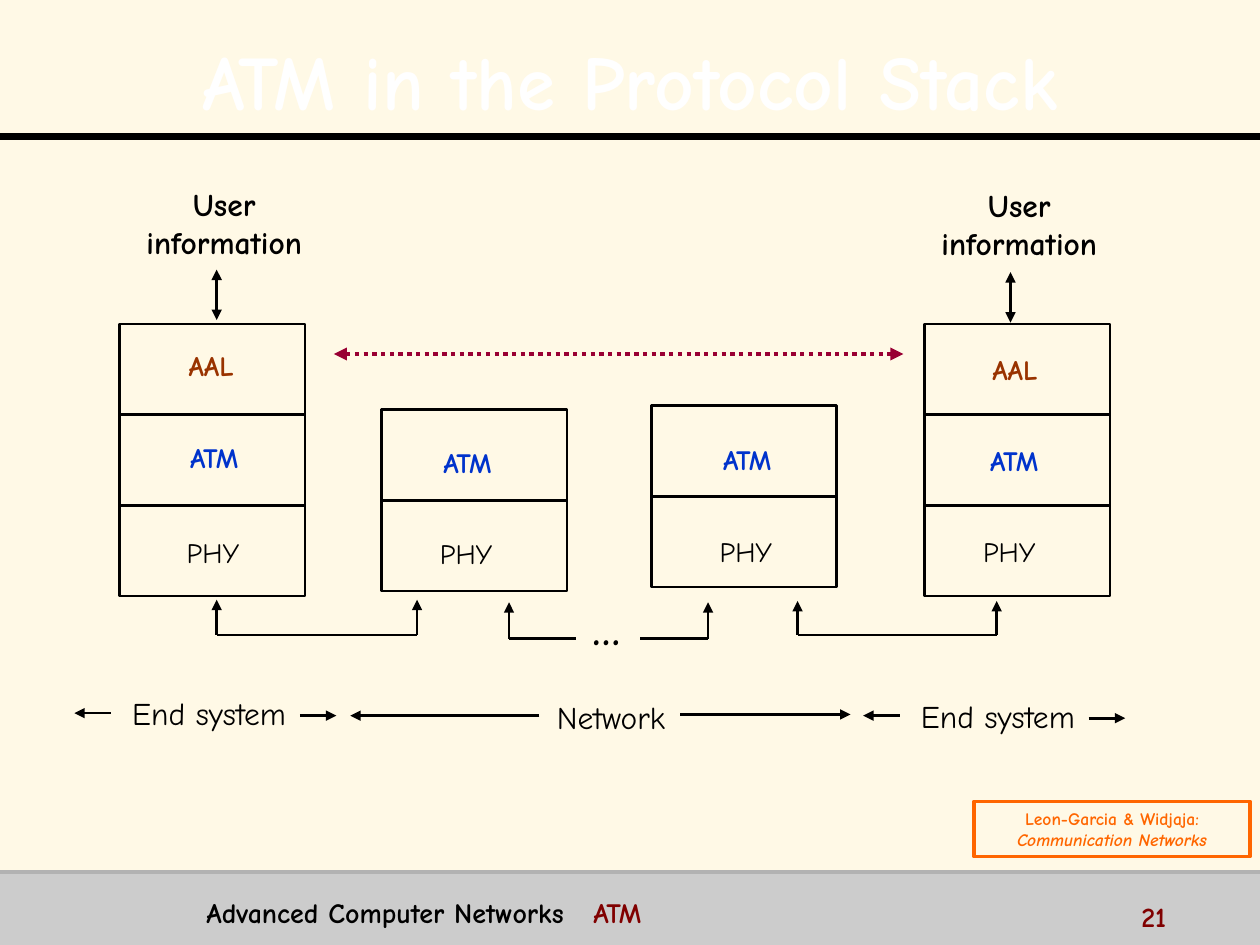
from dataclasses import dataclass

from lxml.etree import SubElement
from pptx import Presentation
from pptx.dml.color import RGBColor
from pptx.enum.dml import MSO_LINE
from pptx.enum.shapes import MSO_CONNECTOR, MSO_SHAPE
from pptx.enum.text import MSO_ANCHOR, PP_ALIGN
from pptx.oxml.ns import qn
from pptx.util import Inches, Pt


@dataclass(frozen=True)
class Theme:
    font: str = "Comic Neue"
    paper: str = "FFF9E6"
    ink: str = "000000"
    white: str = "FFFFFF"
    band: str = "CCCCCC"
    rule: str = "B2B2B2"
    brown: str = "993300"
    blue: str = "0033CC"
    wine: str = "990033"
    maroon: str = "800000"
    orange: str = "FF6600"
    title: int = 44
    dots: int = 24
    body: int = 18
    label: int = 16
    cite: int = 10
    thin: float = 1.5


@dataclass(frozen=True)
class Layer:
    color: str
    bold: bool
    width: float
    height: float = 0.37


@dataclass(frozen=True)
class Stack:
    """A column of layer boxes; each mark is a layer name with its label's left and top."""
    left: float
    top: float
    marks: tuple[tuple[str, float, float], ...]


@dataclass(frozen=True)
class Link:
    """A U-shaped link below two stacks, with an optional gap in its base."""
    left: float
    right: float
    top: float
    base: float
    gap: tuple[float, float] | None = None


@dataclass(frozen=True)
class Span:
    """A zone name with an arrow pointing outwards on either side."""
    text: str
    left: float
    top: float
    west: tuple[float, float, float]
    east: tuple[float, float, float]


T = Theme()
BOX_W, BOX_H, TEXT_W = 1.47, 0.72, 1.66

LAYERS = {
    "AAL": Layer(T.brown, True, 0.65),
    "ATM": Layer(T.blue, True, 0.72),
    "PHY": Layer(T.ink, False, 0.64, 0.36),
}
STACKS = (
    Stack(0.95, 2.57, (("AAL", 1.35, 2.72), ("ATM", 1.34, 3.45), ("PHY", 1.37, 4.2))),
    Stack(3.03, 3.25, (("ATM", 3.35, 3.49), ("PHY", 3.38, 4.21))),
    Stack(5.17, 3.22, (("ATM", 5.57, 3.46), ("PHY", 5.6, 4.19))),
    Stack(7.34, 2.57, (("AAL", 7.73, 2.75), ("ATM", 7.69, 3.47), ("PHY", 7.69, 4.19))),
)
LINKS = (
    Link(1.72, 3.31, 4.76, 5.04),
    Link(4.04, 5.62, 4.78, 5.07, (4.57, 5.08)),
    Link(6.33, 7.91, 4.77, 5.04),
)
SPANS = (
    Span("End system", 0.83, 5.46, (0.88, 0.59, 5.66), (2.38, 2.67, 5.68)),
    Span("Network", 4.02, 5.49, (4.28, 2.78, 5.68), (5.4, 6.75, 5.67)),
    Span("End system", 7.09, 5.48, (7.14, 6.85, 5.68), (8.64, 8.93, 5.7)),
)
USERS = ((0.95, 1.42, 1.72, 2.14), (7.26, 1.43, 8.02, 2.16))


def style(run, size: float, color: str, bold: bool = True, italic: bool = False) -> None:
    values = {"name": T.font, "size": Pt(size), "bold": bold, "italic": italic}
    for key, value in values.items():
        setattr(run.font, key, value)
    run.font.color.rgb = RGBColor.from_string(color)


def add_run(para, text: str, size: float, color: str, **look: bool) -> None:
    run = para.add_run()
    run.text = text
    style(run, size, color, **look)


def add_text(slide, at: tuple, text: str, size: float, color: str = T.ink,
             bold: bool = True, wrap: bool = True, align=PP_ALIGN.CENTER):
    box = slide.shapes.add_textbox(*map(Inches, at))
    box.text_frame.word_wrap = wrap
    para = box.text_frame.paragraphs[0]
    para.alignment = align
    add_run(para, text, size, color, bold=bold)
    return para


def add_box(slide, at: tuple, fill: str | None = None, line: str | None = None,
            width: float = T.thin):
    box = slide.shapes.add_shape(MSO_SHAPE.RECTANGLE, *map(Inches, at))
    box.shadow.inherit = False
    if fill:
        box.fill.solid()
        box.fill.fore_color.rgb = RGBColor.from_string(fill)
    else:
        box.fill.background()
    if line:
        box.line.color.rgb = RGBColor.from_string(line)
        box.line.width = Pt(width)
    else:
        box.line.fill.background()
    return box


def add_line(slide, ends: tuple, color: str = T.ink, width: float = T.thin,
             head: bool = False, tail: bool = False, dash=None) -> None:
    line = slide.shapes.add_connector(MSO_CONNECTOR.STRAIGHT, *map(Inches, ends))
    line.line.color.rgb = RGBColor.from_string(color)
    line.line.width = Pt(width)
    if dash:
        line.line.dash_style = dash
    for tag, shown in {"a:headEnd": head, "a:tailEnd": tail}.items():
        if shown:
            SubElement(line.line._get_or_add_ln(), qn(tag), type="triangle")
    SubElement(line._element.spPr, qn("a:effectLst"))


def add_stack(slide, stack: Stack) -> None:
    for row, (name, left, top) in enumerate(stack.marks):
        layer = LAYERS[name]
        add_box(slide, (stack.left, stack.top + row * BOX_H, BOX_W, BOX_H), line=T.ink)
        add_text(slide, (left, top, layer.width, layer.height), name, T.label,
                 layer.color, layer.bold, wrap=False)


def add_link(slide, link: Link) -> None:
    for x in (link.left, link.right):
        add_line(slide, (x, link.top, x, link.base), head=True)
    stops = (link.left, *(link.gap or ()), link.right)
    for start, end in zip(stops[::2], stops[1::2]):
        add_line(slide, (start, link.base, end, link.base))


def add_span(slide, span: Span) -> None:
    add_text(slide, (span.left, span.top, TEXT_W, 0.4), span.text, T.body, bold=False)
    for start, end, y in (span.west, span.east):
        add_line(slide, (start, y, end, y), tail=True)


def add_title(slide, text: str) -> None:
    title = slide.shapes.title
    places = {"left": 0.2, "top": 0.13, "width": 9.61, "height": 0.87}
    for key, value in places.items():
        setattr(title, key, Inches(value))
    frame = title.text_frame
    frame.word_wrap = True
    frame.vertical_anchor = MSO_ANCHOR.BOTTOM
    frame.margin_bottom = 0
    para = frame.paragraphs[0]
    para.alignment = PP_ALIGN.CENTER
    para.line_spacing = 1.1
    add_run(para, text, T.title, T.white)


def add_cite(slide) -> None:
    frame = add_box(slide, (7.73, 6.36, 2.19, 0.44), line=T.orange, width=2).text_frame
    frame.word_wrap = True
    frame.vertical_anchor = MSO_ANCHOR.MIDDLE
    rows = ((frame.paragraphs[0], "Leon-Garcia & Widjaja:", False),
            (frame.add_paragraph(), "Communication Networks", True))
    for para, text, italic in rows:
        para.alignment = PP_ALIGN.CENTER
        add_run(para, text, T.cite, T.orange, italic=italic)


def add_footer(slide) -> None:
    para = add_text(slide, (1.54, 7.06, 7.28, 0.31), "Advanced Computer Networks",
                    T.label, align=PP_ALIGN.LEFT)
    tabs = SubElement(para._p.get_or_add_pPr(), qn("a:tabLst"))
    SubElement(tabs, qn("a:tab"), pos=str(Inches(3.07)), algn="l")
    add_run(para, "\tATM", T.label, T.maroon)
    add_text(slide, (8.96, 7.09, 1, 0.25), "21", T.label, T.maroon, align=PP_ALIGN.LEFT)


def main() -> None:
    deck = Presentation()
    deck.slide_width, deck.slide_height = Inches(10), Inches(7.5)
    slide = deck.slides.add_slide(deck.slide_layouts[5])
    slide.background.fill.solid()
    slide.background.fill.fore_color.rgb = RGBColor.from_string(T.paper)
    add_box(slide, (0, 6.92, 10, 0.58), fill=T.band)
    add_line(slide, (0, 1.08, 10, 1.08), width=4)
    add_line(slide, (0, 6.92, 10, 6.92), T.rule, 2)
    add_title(slide, "ATM in the Protocol Stack")
    for draw, items in ((add_stack, STACKS), (add_link, LINKS), (add_span, SPANS)):
        for item in items:
            draw(slide, item)
    for left, top, x, y in USERS:
        add_text(slide, (left, top, TEXT_W, 0.7), "User information", T.body)
        add_line(slide, (x, y, x, y + 0.4), head=True, tail=True)
    add_line(slide, (2.65, 2.81, 7.17, 2.81), T.wine, 2.5, True, True, MSO_LINE.ROUND_DOT)
    add_text(slide, (4.56, 4.74, 0.5, 0.5), "…", T.dots)
    add_cite(slide)
    add_footer(slide)
    deck.save("out.pptx")


if __name__ == "__main__":
    main()
